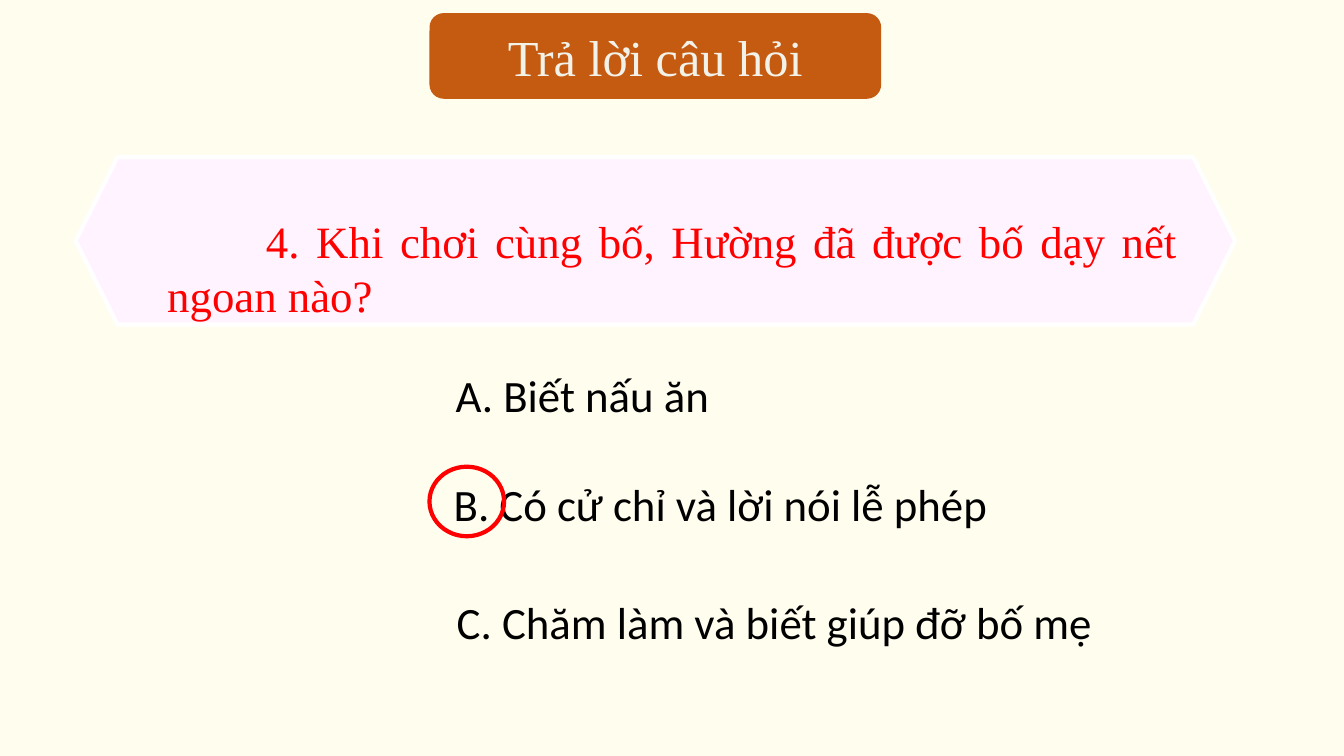
from pptx import Presentation
from pptx.dml.color import RGBColor
from pptx.enum.shapes import MSO_SHAPE
from pptx.enum.text import MSO_ANCHOR, PP_ALIGN
from pptx.util import Inches, Pt

ROUNDED, HEXAGON, OVAL = MSO_SHAPE.ROUNDED_RECTANGLE, MSO_SHAPE.HEXAGON, MSO_SHAPE.OVAL
TOP, MIDDLE = MSO_ANCHOR.TOP, MSO_ANCHOR.MIDDLE
CENTER, JUSTIFY = PP_ALIGN.CENTER, PP_ALIGN.JUSTIFY

CREAM = RGBColor(0xFF, 0xFD, 0xEE)
ORANGE = RGBColor(0xC5, 0x5A, 0x11)
IVORY = RGBColor(0xF2, 0xF2, 0xE9)
LILAC = RGBColor(0xFF, 0xF3, 0xFF)
WHITE = RGBColor(0xFF, 0xFF, 0xFF)
RED = RGBColor(0xFF, 0x00, 0x00)
BLACK = RGBColor(0x00, 0x00, 0x00)

TITLE_FORMAT = {"name": "Times New Roman", "size": Pt(36)}
QUESTION_FORMAT = {"name": "Times New Roman", "size": Pt(32)}
ANSWER_FORMAT = {"name": "Calibri", "size": Pt(32)}

# Left, top and width of each answer
ANSWERS = [
    ("A. Biết nấu ăn", 4.32, 3.33, 4.42),
    ("B. Có cử chỉ và lời nói lễ phép", 4.3, 4.41, 7.14),
    ("C. Chăm làm và biết giúp đỡ bố mẹ", 4.33, 5.58, 7.14),
]


def add_figure(slide, kind, box, fill=None, line=None, line_width=3):
    shape = slide.shapes.add_shape(kind, *map(Inches, box))
    shape.shadow.inherit = False
    if fill is None:
        shape.fill.background()
    else:
        shape.fill.solid()
        shape.fill.fore_color.rgb = fill
    if line is None:
        shape.line.fill.background()
    else:
        shape.line.color.rgb = line
        shape.line.width = Pt(line_width)
    return shape


def write_text(shape, text, font_format, color, alignment, anchor=TOP):
    frame = shape.text_frame
    frame.word_wrap = True
    frame.vertical_anchor = anchor
    paragraph = frame.paragraphs[0]
    paragraph.alignment = alignment
    run = paragraph.add_run()
    run.text = text
    for attribute, value in font_format.items():
        setattr(run.font, attribute, value)
    run.font.color.rgb = color
    return paragraph


def add_title(slide, box):
    banner = add_figure(slide, ROUNDED, box, ORANGE)
    write_text(banner, "Trả lời câu hỏi", TITLE_FORMAT, IVORY, CENTER, MIDDLE)


def add_question(slide, box):
    left, top, width, height = box
    add_figure(slide, HEXAGON, box, LILAC, WHITE)
    text_box = slide.shapes.add_textbox(
        Inches(left + 0.81), Inches(top + 0.51), Inches(width - 1.28), Inches(1.18))
    paragraph = write_text(
        text_box, "4. Khi chơi cùng bố, Hường đã được bố dạy nết ngoan nào?",
        QUESTION_FORMAT, RED, JUSTIFY)
    # First-line indent
    paragraph._p.get_or_add_pPr().set("indent", str(Inches(0.98)))


def add_answer(slide, text, box):
    text_box = slide.shapes.add_textbox(*map(Inches, box))
    text_box.text_frame.margin_left = Inches(0.2)
    paragraph = write_text(text_box, text, ANSWER_FORMAT, BLACK, JUSTIFY)
    paragraph.line_spacing = 1.5


def main():
    presentation = Presentation()
    presentation.slide_width = Inches(13.33)
    presentation.slide_height = Inches(7.5)
    slide = presentation.slides.add_slide(presentation.slide_layouts[6])
    slide.background.fill.solid()
    slide.background.fill.fore_color.rgb = CREAM

    add_title(slide, (4.26, 0.13, 4.48, 0.85))
    add_question(slide, (0.75, 1.56, 11.5, 1.66))
    for text, left, top, width in ANSWERS:
        add_answer(slide, text, (left, top, width, 0.91))
    # Ring around the correct answer
    add_figure(slide, OVAL, (4.26, 4.63, 0.74, 0.69), line=RED)

    presentation.save("out.pptx")


if __name__ == "__main__":
    main()
